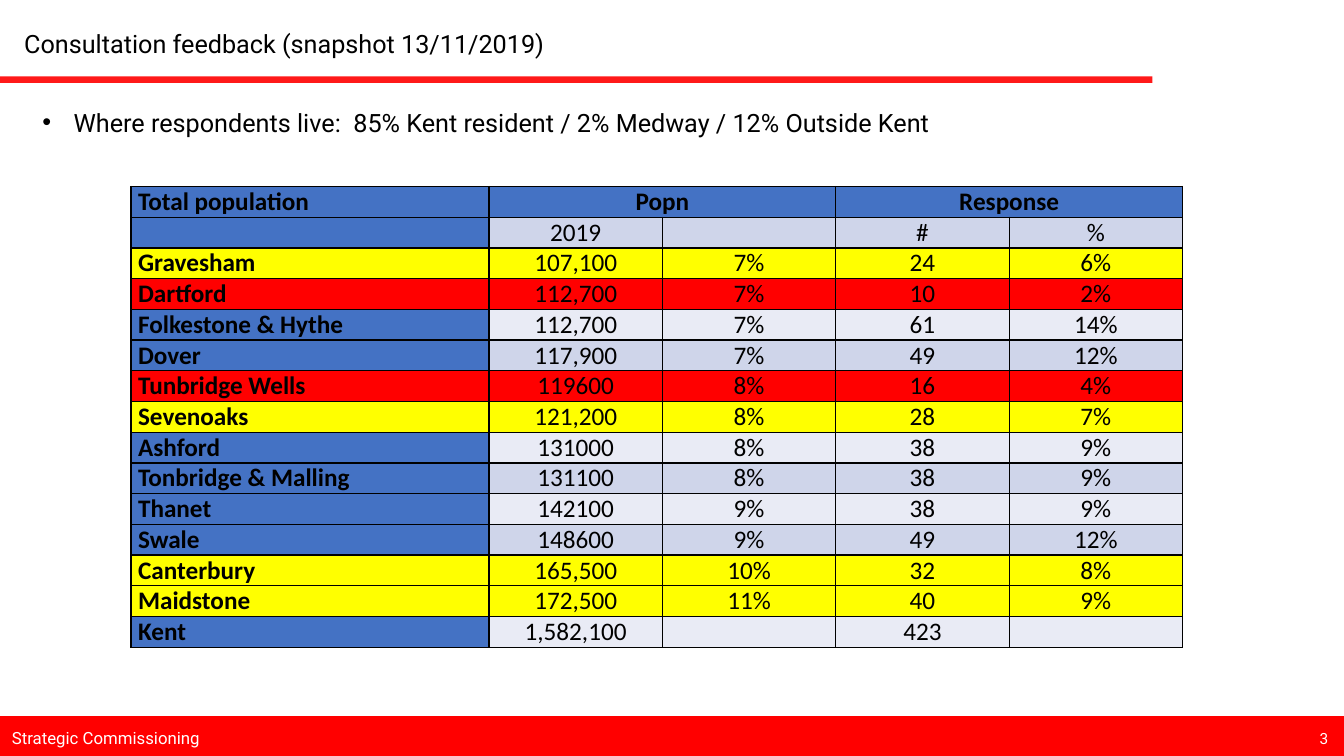
from lxml import etree
from pptx import Presentation
from pptx import util as u
from pptx.dml.color import RGBColor
from pptx.enum import shapes, text
from pptx.oxml import ns

COLOURS = {
    "black": "000000", "white": "FFFFFF", "red": "FF0000", "yellow": "FFFF00",
    "blue": "4472C4", "odd band": "CFD5EA", "even band": "E9EBF5",
}

HEADER = ("Total population", "Popn", "", "Response", "")
SUBHEADER = ("", "2019", "", "#", "%")
DISTRICTS = [
    ("Gravesham", "107,100", "7%", "24", "6%"),
    ("Dartford", "112,700", "7%", "10", "2%"),
    ("Folkestone & Hythe", "112,700", "7%", "61", "14%"),
    ("Dover", "117,900", "7%", "49", "12%"),
    ("Tunbridge Wells", "119600", "8%", "16", "4%"),
    ("Sevenoaks", "121,200", "8%", "28", "7%"),
    ("Ashford", "131000", "8%", "38", "9%"),
    ("Tonbridge & Malling", "131100", "8%", "38", "9%"),
    ("Thanet", "142100", "9%", "38", "9%"),
    ("Swale", "148600", "9%", "49", "12%"),
    ("Canterbury", "165,500", "10%", "32", "8%"),
    ("Maidstone", "172,500", "11%", "40", "9%"),
    ("Kent", "1,582,100", "", "423", ""),
]
HIGHLIGHTS = {
    "Gravesham": "yellow", "Sevenoaks": "yellow", "Canterbury": "yellow",
    "Maidstone": "yellow", "Dartford": "red", "Tunbridge Wells": "red",
}
COLUMN_WIDTHS = (3.55, 1.72, 1.72, 1.72, 1.72)
ROW_HEIGHT = 0.305


def colour(name):
    return RGBColor.from_string(COLOURS[name])


def add_element(parent, tag, **attributes):
    return etree.SubElement(parent, ns.qn(tag), attributes)


class SlideBuilder:
    """Holds the style and the current slide, and adds each kind of element."""

    font_name = "Roboto"
    table_font = "Calibri"
    size = 18

    def __init__(self, slide):
        self.slide = slide

    def style(self, paragraph, size, name, font=None, bold=False):
        for run in paragraph.runs:
            run.font.name = font or self.font_name
            run.font.size = u.Pt(size)
            run.font.bold = bold
            run.font.color.rgb = colour(name)

    def place(self, shape, left, top, width, height):
        shape.left, shape.top = u.Inches(left), u.Inches(top)
        shape.width, shape.height = u.Inches(width), u.Inches(height)

    def fill_placeholder(self, shape, words, box):
        self.place(shape, *box)
        frame = shape.text_frame
        frame.text = words
        frame.word_wrap = True
        frame.auto_size = text.MSO_AUTO_SIZE.NONE
        frame.vertical_anchor = text.MSO_ANCHOR.TOP
        paragraph = frame.paragraphs[0]
        paragraph.alignment = text.PP_ALIGN.LEFT
        self.style(paragraph, self.size, "black")
        return paragraph

    def title(self, words, *box):
        self.fill_placeholder(self.slide.shapes.title, words, box)

    def bullet(self, words, *box):
        paragraph = self.fill_placeholder(self.slide.placeholders[1], words, box)
        properties = paragraph._p.get_or_add_pPr()
        indent = u.Inches(0.31)
        properties.set("marL", str(indent))
        properties.set("indent", str(-indent))
        add_element(properties, "a:buFont", typeface="Arial")
        add_element(properties, "a:buChar", char="•")
        paragraph.space_before = u.Pt(0)

    def label(self, words, size, *box):
        shape = self.slide.shapes.add_textbox(*map(u.Inches, box))
        frame = shape.text_frame
        frame.text = words
        frame.word_wrap = True
        frame.vertical_anchor = text.MSO_ANCHOR.MIDDLE
        self.style(frame.paragraphs[0], size, "white")

    def band(self, name, *box):
        shape = self.slide.shapes.add_shape(
            shapes.MSO_SHAPE.RECTANGLE, *map(u.Inches, box))
        shape.shadow.inherit = False
        shape.fill.solid()
        shape.fill.fore_color.rgb = colour(name)
        shape.line.color.rgb = colour(name)
        shape.line.width = u.Pt(1)

    def rule(self, name, left, top, right):
        connector = self.slide.shapes.add_connector(
            shapes.MSO_CONNECTOR.STRAIGHT,
            *map(u.Inches, (left, top, right, top)))
        connector.line.color.rgb = colour(name)
        connector.line.width = u.Pt(4.5)
        properties = connector._element.spPr
        add_element(properties.find(".//" + ns.qn("a:srgbClr")), "a:alpha", val="90000")
        add_element(properties, "a:effectLst")

    def cell(self, cell, words, fill, bold, centred):
        cell.text = words
        cell.margin_left = cell.margin_right = u.Inches(0.07)
        cell.margin_top = cell.margin_bottom = 0
        cell.vertical_anchor = text.MSO_ANCHOR.MIDDLE
        paragraph = cell.text_frame.paragraphs[0]
        if centred:
            paragraph.alignment = text.PP_ALIGN.CENTER
        self.style(paragraph, self.size, "black", self.table_font, bold)
        properties = cell._tc.get_or_add_tcPr()
        for side in ("a:lnL", "a:lnR", "a:lnT", "a:lnB"):
            border = add_element(properties, side, w=str(u.Pt(1)))
            add_element(add_element(border, "a:solidFill"), "a:srgbClr",
                        val=COLOURS["black"])
        cell.fill.solid()
        cell.fill.fore_color.rgb = colour(fill)

    def table(self, rows, left, top):
        frame = self.slide.shapes.add_table(
            len(rows), len(COLUMN_WIDTHS), u.Inches(left), u.Inches(top),
            u.Inches(sum(COLUMN_WIDTHS)), u.Inches(ROW_HEIGHT * len(rows)))
        table = frame.table
        for column, width in zip(table.columns, COLUMN_WIDTHS):
            column.width = u.Inches(width)
        for row_index, row in enumerate(rows):
            band = "odd band" if row_index % 2 else "even band"
            highlight = HIGHLIGHTS.get(row[0])
            for column_index, words in enumerate(row):
                heading = row_index == 0 or column_index == 0
                fill = highlight or ("blue" if heading else band)
                self.cell(table.cell(row_index, column_index), words, fill,
                          heading, column_index > 0)
        for start in (1, 3):
            table.cell(0, start).merge(table.cell(0, start + 1))


def main():
    presentation = Presentation()
    presentation.slide_width = u.Inches(13.33)
    presentation.slide_height = u.Inches(7.5)
    builder = SlideBuilder(
        presentation.slides.add_slide(presentation.slide_layouts[1]))
    builder.band("red", 0, 7.11, 13.33, 0.4)
    builder.rule("red", 0, 0.79, 11.43)
    builder.label("Strategic Commissioning", 12, 0.02, 7.12, 2.33, 0.4)
    builder.title("Consultation feedback (snapshot 13/11/2019)", 0.14, 0.23, 5.45, 0.4)
    builder.label("3", 11, 12.99, 7.18, 0.34, 0.29)
    builder.bullet(
        "Where respondents live:  85% Kent resident / 2% Medway / 12% Outside Kent",
        0.32, 1.01, 11.09, 1.01)
    builder.table([HEADER, SUBHEADER, *DISTRICTS], 1.3, 1.85)
    presentation.save("out.pptx")


if __name__ == "__main__":
    main()
